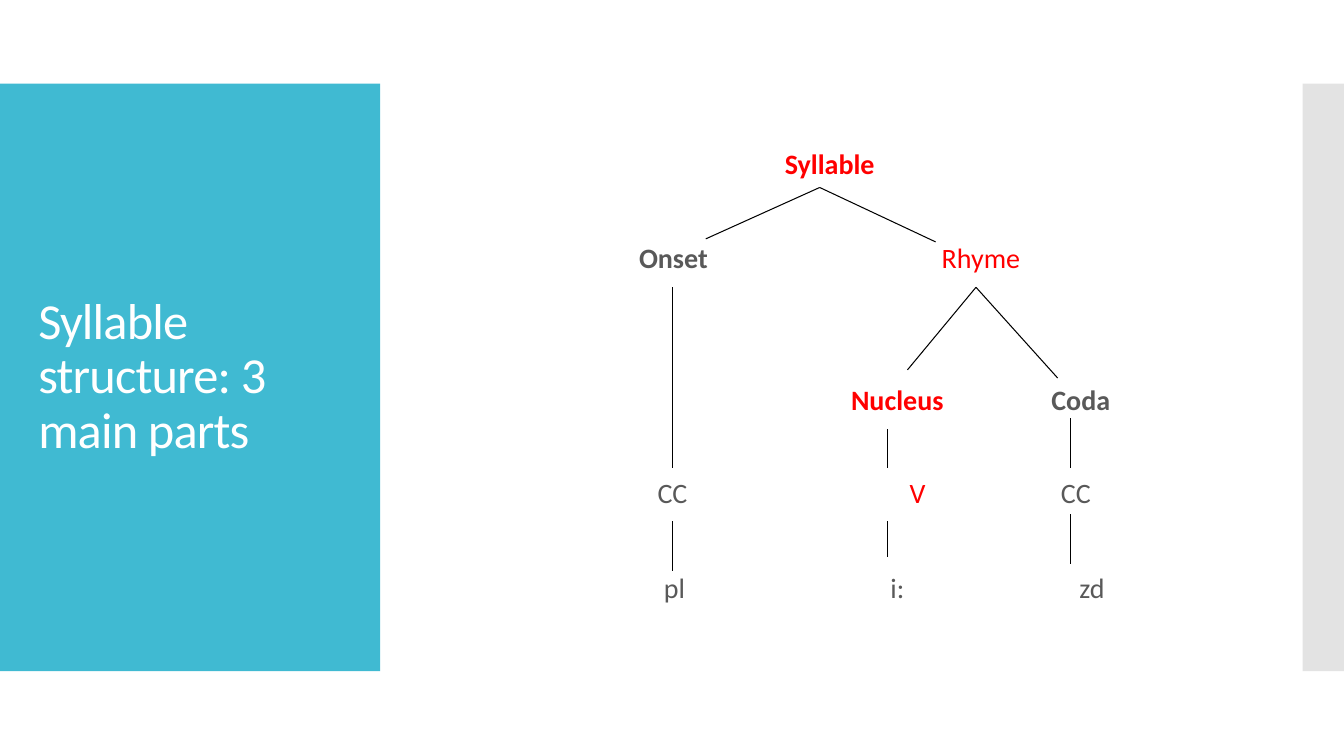
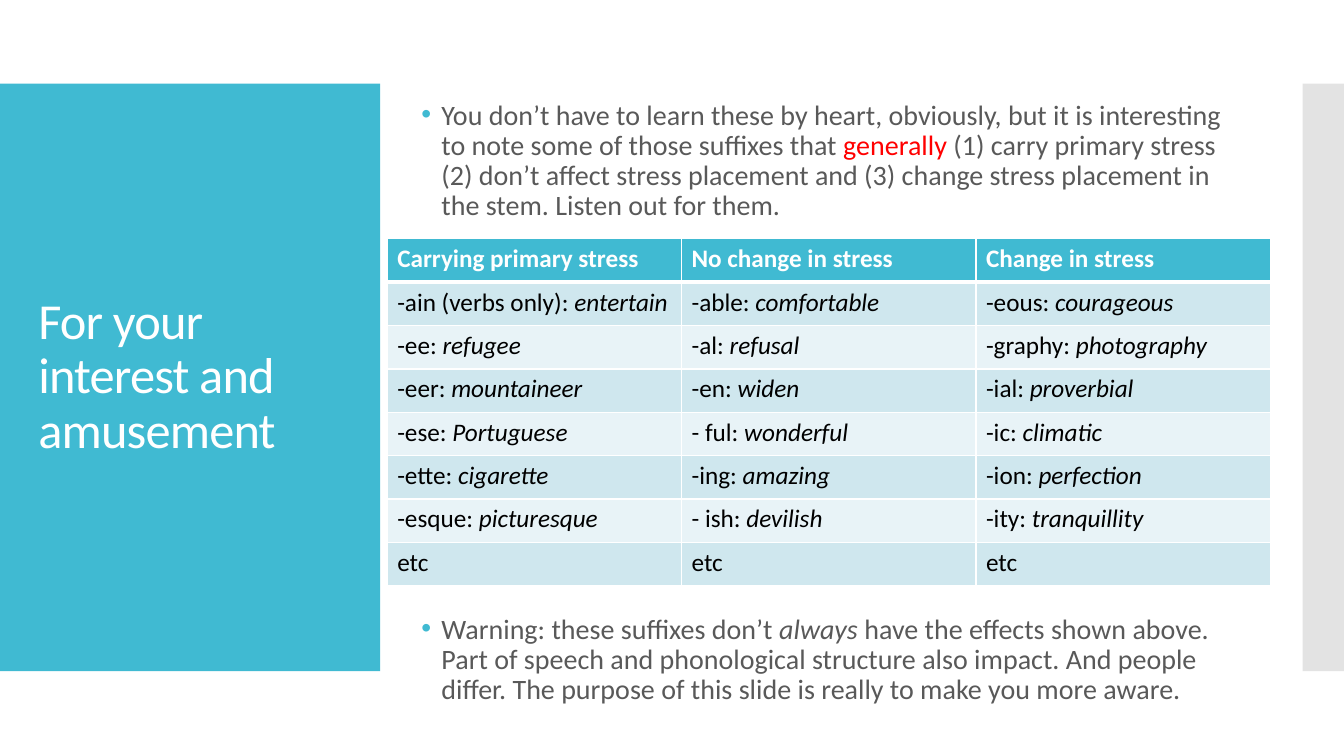
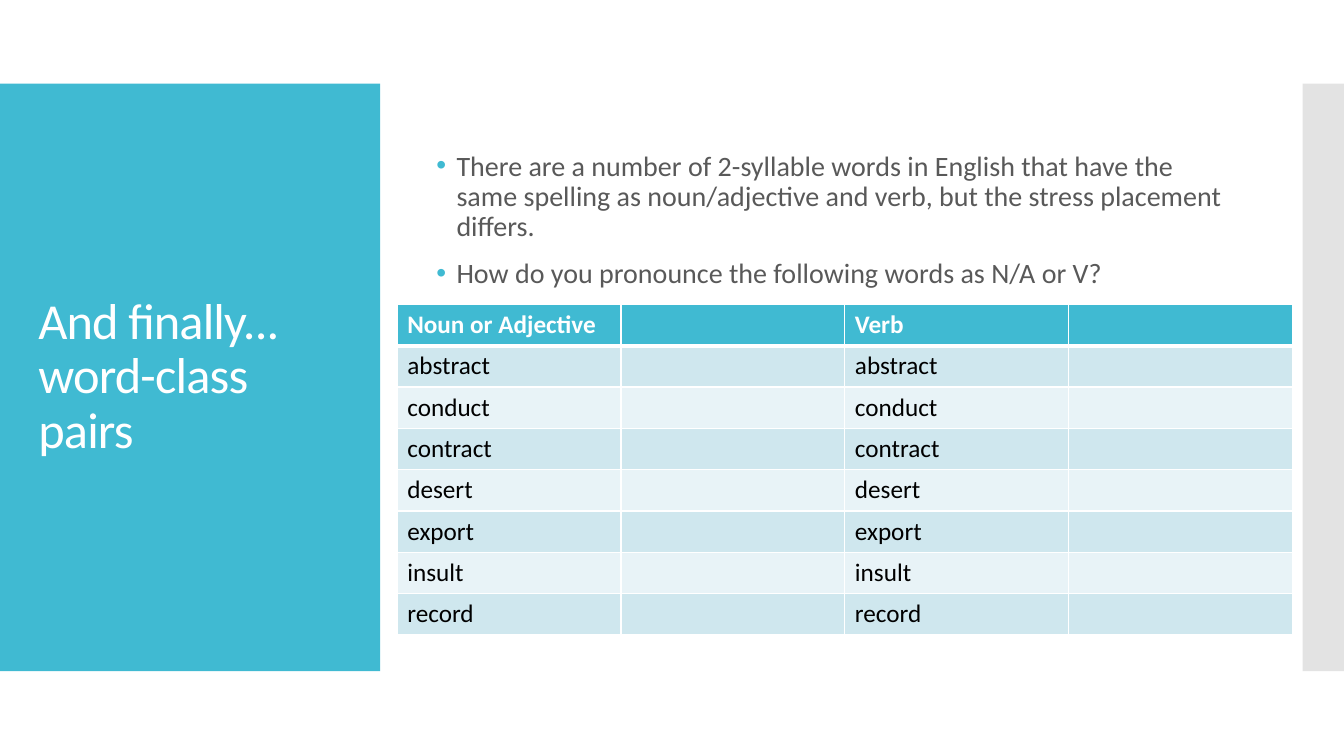
import lxml.etree
import pptx
import pptx.dml.color
import pptx.enum.shapes
import pptx.enum.text
import pptx.oxml.ns
import pptx.util

Inches = pptx.util.Inches
Pt = pptx.util.Pt
RGBColor = pptx.dml.color.RGBColor
PP_ALIGN = pptx.enum.text.PP_ALIGN
qn = pptx.oxml.ns.qn

TEAL = RGBColor(0x40, 0xBA, 0xD2)
PALE_TEAL = RGBColor(0xCF, 0xE7, 0xEE)
PALEST_TEAL = RGBColor(0xE8, 0xF3, 0xF7)
SILVER = RGBColor(0xC8, 0xC8, 0xC8)
GRAY = RGBColor(0x59, 0x59, 0x59)
RED = RGBColor(0xFF, 0x00, 0x00)
WHITE = RGBColor(0xFF, 0xFF, 0xFF)
BLACK = RGBColor(0x00, 0x00, 0x00)

FONT = "Calibri"
TITLE = {"size": Pt(36), "color": WHITE}
BODY = {"size": Pt(20), "color": GRAY}
HEADER = {"size": Pt(18), "color": WHITE, "bold": True}
CELL = {"size": Pt(18), "color": BLACK, "bold": False}


class Deck:
    """Holds the style and the current slide."""

    def __init__(self):
        self.presentation = pptx.Presentation()
        self.presentation.slide_width = Inches(13.33)
        self.presentation.slide_height = Inches(7.5)
        self.slide = None

    def add_slide(self, *title_lines):
        layout = self.presentation.slide_layouts[5]
        self.slide = self.presentation.slides.add_slide(layout)
        self.band(0, 3.77, TEAL)
        self.band(12.92, 0.42, SILVER, opacity=50)
        title = self.slide.shapes.title
        self.place(title, 0.28, 1.23, 3.22, 5.03)
        paragraph = self.paragraph(title.text_frame, 0, PP_ALIGN.LEFT)
        for index, line in enumerate(title_lines):
            if index:
                paragraph.add_line_break()
            run = self.run(paragraph, line, TITLE)
            run.font._element.set("spc", "-60")

    def band(self, left, width, color, opacity=100):
        """Side band, kept behind the title."""
        rectangle = pptx.enum.shapes.MSO_SHAPE.RECTANGLE
        band = self.slide.shapes.add_shape(
            rectangle, Inches(left), Inches(0.83), Inches(width), Inches(5.83))
        band.shadow.inherit = False
        band.line.fill.background()
        band.fill.solid()
        band.fill.fore_color.rgb = color
        if opacity < 100:
            fill_color = band.element.spPr.find(qn("a:solidFill"))[0]
            alpha = lxml.etree.SubElement(fill_color, qn("a:alpha"))
            alpha.set("val", str(opacity * 1000))
        self.slide.shapes.element.insert(2, band.element)

    def place(self, shape, left, top, width, height):
        bounds = {"left": left, "top": top, "width": width, "height": height}
        for name, value in bounds.items():
            setattr(shape, name, Inches(value))
        frame_format = {
            "word_wrap": True,
            "auto_size": pptx.enum.text.MSO_AUTO_SIZE.NONE,
            "vertical_anchor": pptx.enum.text.MSO_ANCHOR.MIDDLE,
        }
        for name, value in frame_format.items():
            setattr(shape.text_frame, name, value)

    def paragraph(self, frame, index, alignment):
        paragraph = frame.add_paragraph() if index else frame.paragraphs[0]
        paragraph.alignment = alignment
        paragraph.line_spacing = 0.9
        paragraph.space_before = Pt(12 if index else 0)
        return paragraph

    def run(self, paragraph, text, style, **changes):
        run = paragraph.add_run()
        run.text = text
        values = {"name": FONT, **style, **changes}
        run.font.color.rgb = values.pop("color")
        for name, value in values.items():
            setattr(run.font, name, value)
        return run

    def text_box(self, left, top, width, height):
        box = self.slide.shapes.add_textbox(0, 0, 0, 0)
        self.place(box, left, top, width, height)
        return box.text_frame

    def label(self, text, center, middle, **changes):
        frame = self.text_box(center - 0.75, middle - 0.2, 1.5, 0.4)
        paragraph = self.paragraph(frame, 0, PP_ALIGN.CENTER)
        self.run(paragraph, text, BODY, **changes)

    def bullets(self, left, top, width, height, items):
        """Each item is a list of (text, format changes)."""
        frame = self.text_box(left, top, width, height)
        for index, parts in enumerate(items):
            paragraph = self.paragraph(frame, index, PP_ALIGN.LEFT)
            properties = paragraph._p.get_or_add_pPr()
            indent = Inches(0.2)
            properties.set("marL", str(indent))
            properties.set("indent", str(-indent))
            color = lxml.etree.SubElement(properties, qn("a:buClr"))
            lxml.etree.SubElement(color, qn("a:srgbClr")).set("val", str(TEAL))
            font = lxml.etree.SubElement(properties, qn("a:buFont"))
            font.set("typeface", "Arial")
            bullet = lxml.etree.SubElement(properties, qn("a:buChar"))
            bullet.set("char", "•")
            for text, changes in parts:
                self.run(paragraph, text, BODY, **changes)

    def line(self, start, end):
        straight = pptx.enum.shapes.MSO_CONNECTOR.STRAIGHT
        points = [Inches(value) for value in (*start, *end)]
        connector = self.slide.shapes.add_connector(straight, *points)
        connector.line.color.rgb = BLACK
        connector.line.width = Pt(0.75)
        lxml.etree.SubElement(connector.element.spPr, qn("a:effectLst"))

    def borders(self, cell, row):
        heavy = {("lnB", 0), ("lnT", 1)}
        properties = cell._tc.get_or_add_tcPr()
        for edge in ("lnL", "lnR", "lnT", "lnB"):
            border = lxml.etree.SubElement(properties, qn("a:" + edge))
            border.set("w", str(Pt(3 if (edge, row) in heavy else 1)))
            fill = lxml.etree.SubElement(border, qn("a:solidFill"))
            lxml.etree.SubElement(fill, qn("a:srgbClr")).set("val", str(WHITE))

    def table(self, left, top, column_width, row_height, rows):
        """In a body cell, the example after a colon is in italics."""
        columns = len(rows[0])
        table = self.slide.shapes.add_table(
            len(rows), columns, Inches(left), Inches(top),
            Inches(column_width * columns), Inches(row_height * len(rows))).table
        table.horz_banding = False
        for column in table.columns:
            column.width = Inches(column_width)
        for row, texts in enumerate(rows):
            table.rows[row].height = Inches(row_height)
            color = (PALE_TEAL if row % 2 else PALEST_TEAL) if row else TEAL
            for column, text in enumerate(texts):
                cell = table.cell(row, column)
                self.borders(cell, row)
                cell.fill.solid()
                cell.fill.fore_color.rgb = color
                lead, separator, example = text.partition(": ")
                paragraph = cell.text_frame.paragraphs[0]
                if lead:
                    self.run(paragraph, lead + separator, CELL if row else HEADER)
                if example:
                    self.run(paragraph, example, CELL, italic=True)


def syllable_slide(deck):
    deck.add_slide("Syllable structure: 3 main parts")
    # Tree labels, level by level
    levels = [
        (1.64, [("Syllable", 8.23, RED, True)]),
        (2.57, [("Onset", 6.68, GRAY, True), ("Rhyme", 9.73, RED, False)]),
        (3.98, [("Nucleus", 8.9, RED, True), ("Coda", 10.72, GRAY, True)]),
        (4.91, [("CC", 6.67, GRAY, False), ("V", 9.1, RED, False),
                ("CC", 10.67, GRAY, False)]),
        (5.85, [("pl", 6.69, GRAY, False), ("i:", 8.9, GRAY, False),
                ("zd", 10.83, GRAY, False)]),
    ]
    for middle, labels in levels:
        for text, center, color, bold in labels:
            deck.label(text, center, middle, color=color, bold=bold)
    # Slanted branches
    syllable, rhyme = (8.13, 1.86), (9.68, 2.85)
    for start, end in [(syllable, (7, 2.37)), (syllable, (9.28, 2.4)),
                       (rhyme, (9, 3.67)), (rhyme, (10.49, 3.75))]:
        deck.line(start, end)
    # Upright branches: onset, nucleus, coda
    for x, spans in [(6.67, [(2.85, 4.64), (5.17, 5.66)]),
                     (8.8, [(4.26, 4.64), (5.17, 5.53)]),
                     (10.62, [(4.15, 4.64), (5.1, 5.6)])]:
        for top, bottom in spans:
            deck.line((x, top), (x, bottom))


def suffix_slide(deck):
    deck.add_slide("For your interest and amusement")
    deck.bullets(4.08, 0.94, 8.15, 1.32, [[
        ("You don’t have to learn these by heart, obviously, but it is "
         "interesting to note some of those suffixes that ", {}),
        ("generally", {"color": RED}),
        (" (1) carry primary stress (2) don’t affect stress placement and (3) "
         "change stress placement in the stem. Listen out for them.", {}),
    ]])
    deck.table(3.84, 2.37, 2.92, 0.43, [
        ("Carrying primary stress", "No change in stress", "Change in stress"),
        ("-ain (verbs only): entertain", "-able: comfortable", "-eous: courageous"),
        ("-ee: refugee", "-al: refusal", "-graphy: photography"),
        ("-eer: mountaineer", "-en: widen", "-ial: proverbial"),
        ("-ese: Portuguese", "- ful: wonderful", "-ic: climatic"),
        ("-ette: cigarette", "-ing: amazing", "-ion: perfection"),
        ("-esque: picturesque", "- ish: devilish", "-ity: tranquillity"),
        ("etc",) * 3,
    ])
    deck.bullets(4.08, 6.05, 8.15, 1, [[
        ("Warning: these suffixes don’t ", {}),
        ("always ", {"italic": True}),
        ("have the effects shown above. Part of speech and phonological "
         "structure also impact. And people differ. The purpose of this slide "
         "is really to make you more aware.", {}),
    ]])


def word_pairs_slide(deck):
    deck.add_slide("And finally... word-class", "pairs")
    deck.bullets(4.23, 1.44, 8, 1.5, [
        [("There are a number of 2-syllable words in English that have the same "
          "spelling as noun/adjective and verb, but the stress placement "
          "differs.", {})],
        [("How do you pronounce the following words as N/A or V?", {})],
    ])
    words = ["abstract", "conduct", "contract", "desert", "export", "insult",
             "record"]
    deck.table(3.94, 3.02, 2.22, 0.41,
               [("Noun or Adjective", "", "Verb", "")]
               + [(word, "", word, "") for word in words])


def main():
    deck = Deck()
    syllable_slide(deck)
    suffix_slide(deck)
    word_pairs_slide(deck)
    deck.presentation.save("out.pptx")


if __name__ == "__main__":
    main()
